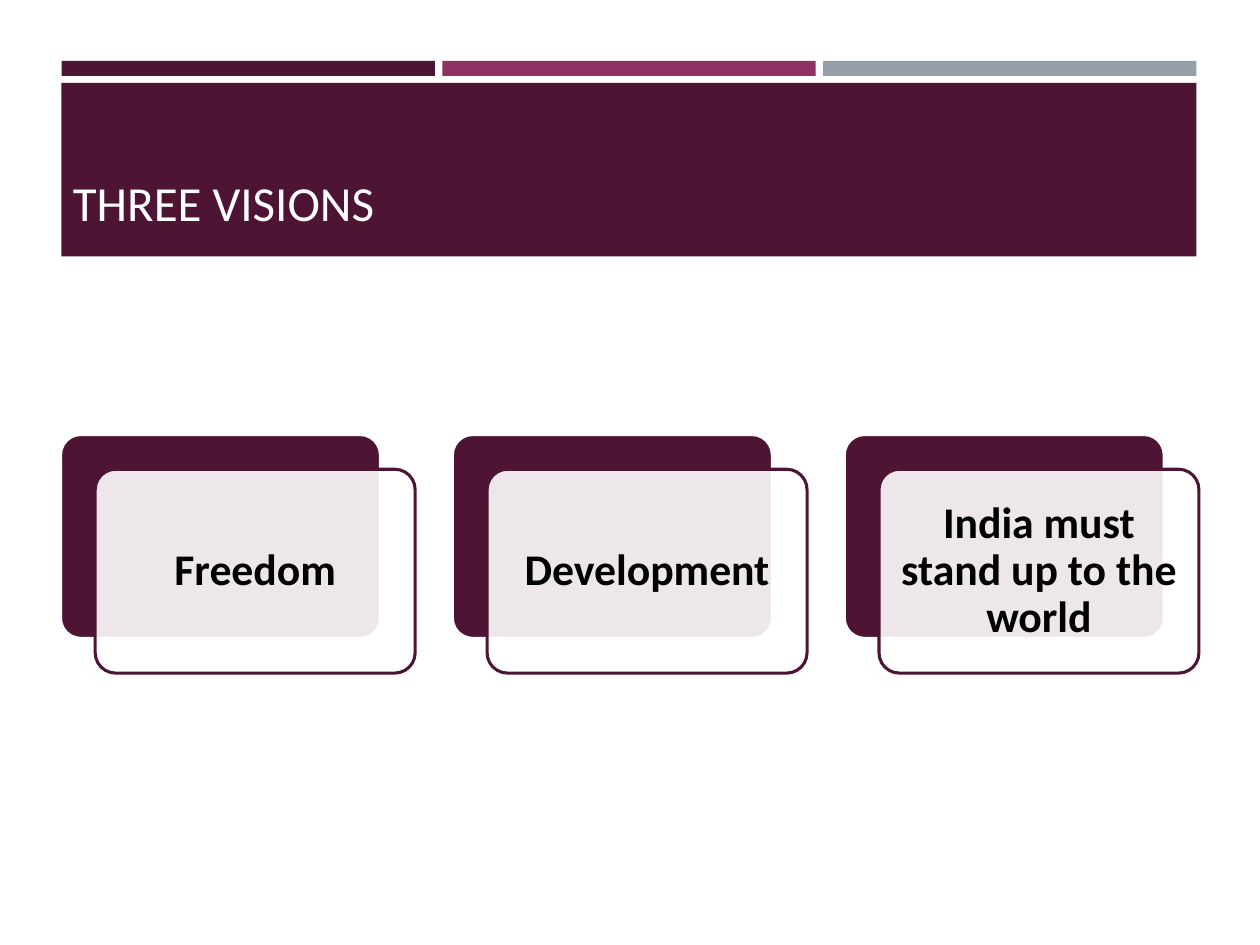
from dataclasses import dataclass

from lxml import etree
from pptx import Presentation
from pptx.dml.color import RGBColor
from pptx.enum.shapes import MSO_SHAPE
from pptx.enum.text import MSO_ANCHOR, PP_ALIGN
from pptx.oxml.ns import qn
from pptx.util import Cm, Pt

RECTANGLE = MSO_SHAPE.RECTANGLE
ROUNDED = MSO_SHAPE.ROUNDED_RECTANGLE
BOTTOM, MIDDLE = MSO_ANCHOR.BOTTOM, MSO_ANCHOR.MIDDLE
CENTER = PP_ALIGN.CENTER


@dataclass(frozen=True)
class Theme:
    plum: RGBColor = RGBColor(0x4D, 0x14, 0x34)
    berry: RGBColor = RGBColor(0x90, 0x31, 0x63)
    gray: RGBColor = RGBColor(0x96, 0x9F, 0xA7)
    white: RGBColor = RGBColor(0xFF, 0xFF, 0xFF)
    title_color: RGBColor = RGBColor(0xFF, 0xFE, 0xFF)
    black: RGBColor = RGBColor(0, 0, 0)
    font: str = "Calibri"
    title_size: Pt = Pt(28)
    card_size: Pt = Pt(25)
    outline: Pt = Pt(1.75)


theme = Theme()
deck = Presentation()
deck.slide_width, deck.slide_height = Cm(25.4), Cm(19.05)
page = deck.slides.add_slide(deck.slide_layouts[6])


def add_block(kind, left, top, width, height, fill, line=None):
    """Add a filled shape in centimetres, outlined only if a line colour is given."""
    block = page.shapes.add_shape(kind, Cm(left), Cm(top), Cm(width), Cm(height))
    block.shadow.inherit = False
    block.fill.solid()
    block.fill.fore_color.rgb = fill
    if line is None:
        block.line.fill.background()
    else:
        block.line.color.rgb = line
        block.line.width = theme.outline
    if kind == ROUNDED:
        block.adjustments[0] = 0.1
    return block


def set_text(box, text, size, color, bold=False):
    box.text_frame.word_wrap = True
    paragraph = box.text_frame.paragraphs[0]
    paragraph.text = text
    paragraph.font.name = theme.font
    paragraph.font.size = size
    paragraph.font.bold = bold
    paragraph.font.color.rgb = color
    return paragraph


# Header: three bars above a title band
band_left, band_width, bar_gap = 1.24, 22.88, 0.15
bar_colors = (theme.plum, theme.berry, theme.gray)
bar_width = (band_width - 2 * bar_gap) / 3
for index, color in enumerate(bar_colors):
    bar_left = band_left + index * (bar_width + bar_gap)
    add_block(RECTANGLE, bar_left, 1.23, bar_width, 0.3, color)
add_block(RECTANGLE, band_left, 1.67, band_width, 3.5, theme.plum)

title = page.shapes.add_textbox(Cm(1.22), Cm(1.96), Cm(22.99), Cm(2.82))
title.text_frame.vertical_anchor = BOTTOM
set_text(title, "THREE VISIONS", theme.title_size, theme.title_color)

# Visions: each a translucent card over a solid one
visions = ("Freedom", "Development", "India must stand up to the world")
cards_left, cards_top, card_pitch = 1.22, 8.76, 7.9
card_width, card_height, card_shift = 6.45, 4.11, 0.7
for index, vision in enumerate(visions):
    left = cards_left + index * card_pitch
    add_block(ROUNDED, left, cards_top, card_width, card_height, theme.plum, theme.white)
    card = add_block(ROUNDED, left + card_shift, cards_top + card_shift,
                     card_width, card_height, theme.white, theme.plum)
    fill_color = card.fill._xPr.find(qn("a:solidFill"))[0]
    etree.SubElement(fill_color, qn("a:alpha"), val="90000")

    frame = card.text_frame
    frame.vertical_anchor = MIDDLE
    frame.margin_left = frame.margin_right = Cm(0.25)
    frame.margin_top = frame.margin_bottom = Cm(0.25)
    paragraph = set_text(card, vision, theme.card_size, theme.black, bold=True)
    paragraph.alignment = CENTER
    paragraph.line_spacing = 0.9

deck.save("out.pptx")
